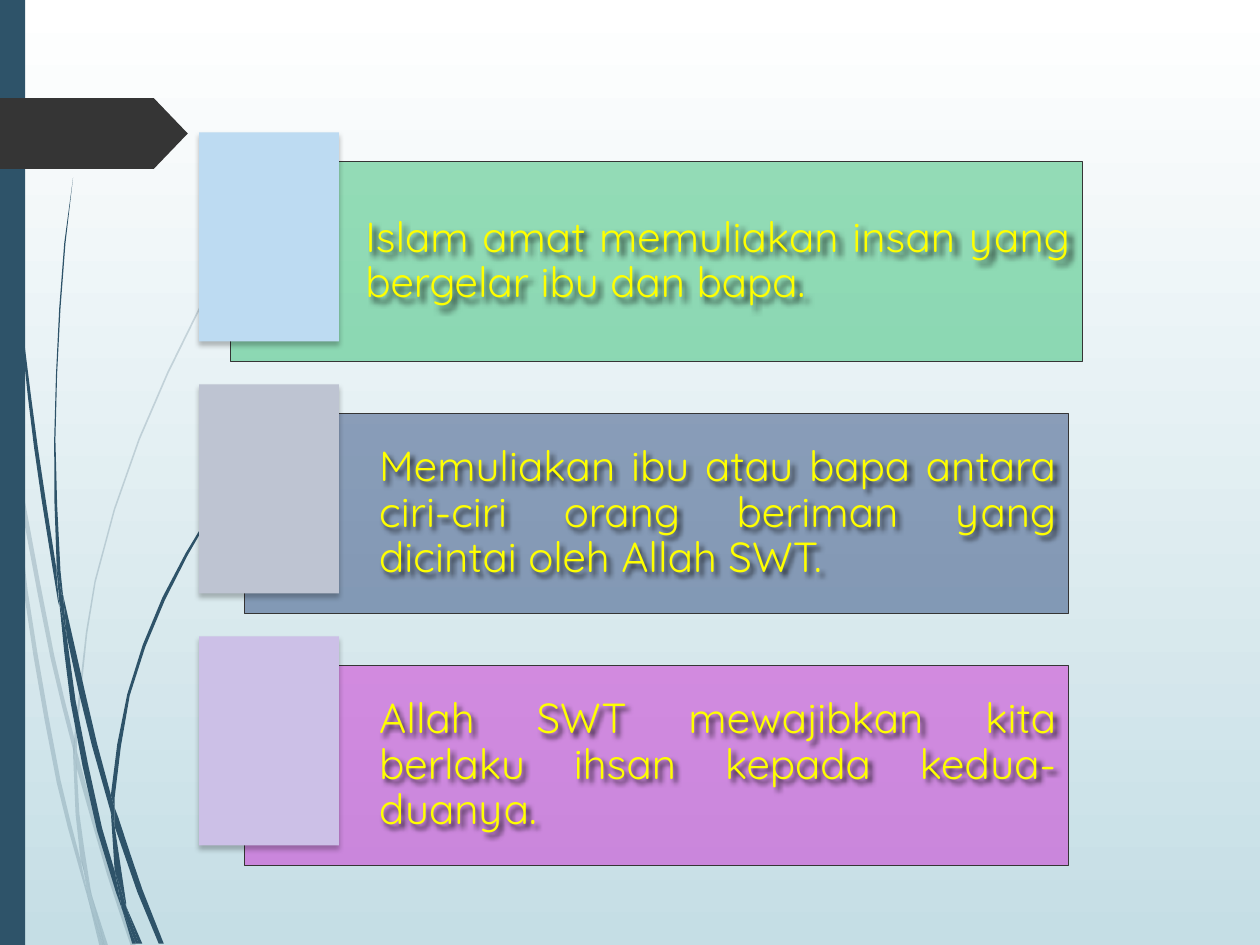
from math import dist

from lxml import etree
from pptx import Presentation
from pptx.dml.color import RGBColor
from pptx.enum.shapes import MSO_SHAPE
from pptx.enum.text import MSO_ANCHOR, PP_ALIGN
from pptx.oxml.ns import qn
from pptx.util import Pt

PX = 9144  # 100 px to the inch
RECTANGLE, PENTAGON = MSO_SHAPE.RECTANGLE, MSO_SHAPE.PENTAGON
JUSTIFY, MIDDLE = PP_ALIGN.JUSTIFY, MSO_ANCHOR.MIDDLE

WHITE = RGBColor(0xFF, 0xFF, 0xFF)
MIST = RGBColor(0xC5, 0xDE, 0xE5)
TEAL = RGBColor(0x2E, 0x53, 0x69)
CHARCOAL = RGBColor(0x35, 0x35, 0x35)
YELLOW = RGBColor(0xFF, 0xFF, 0x00)
GREEN = RGBColor(0x00, 0xB0, 0x50)
NAVY = RGBColor(0x00, 0x20, 0x60)
MAGENTA = RGBColor(0xCC, 0x00, 0xCC)
PALE_BLUE = RGBColor(0xBD, 0xDB, 0xF2)
PALE_GREY = RGBColor(0xBE, 0xC4, 0xD2)
PALE_VIOLET = RGBColor(0xCC, 0xC0, 0xE7)

# Each blade of grass has two edges, drawn one after the other round its outline.
FAINT_BLADES = [
    ([(8, 350), (6, 322), (0, 282)], [(0, 299), (7, 344), (8, 350)]),
    ([(10, 345), (43, 520), (59, 586)], [(59, 599), (40, 522), (12, 376)]),
    ([(61, 596), (64, 607), (88, 692), (108, 751)], [(104, 751), (85, 694), (61, 610)]),
    ([(73, 711), (83, 751)], [(86, 751), (73, 711)]),
    ([(8, 350), (19, 470), (45, 621), (64, 693), (70, 714)],
     [(69, 707), (64, 683), (48, 619), (22, 469), (12, 376), (8, 350)]),
    ([(58, 599), (60, 646), (64, 683), (67, 692), (73, 711)],
     [(72, 706), (63, 646), (61, 610), (61, 608), (58, 599)]),
    ([(61, 596), (61, 584), (76, 462), (111, 349), (159, 245), (187, 198), (201, 175), (217, 154)],
     [(217, 153), (201, 175), (186, 197), (158, 244), (110, 348), (75, 461), (59, 584), (59, 586)]),
    ([(70, 714), (79, 751)], [(82, 751), (70, 714)]),
    ([(61, 608), (61, 610), (61, 596)], [(59, 586), (58, 599)]),
    ([(65, 683), (69, 707), (70, 714), (82, 751)], [(83, 751), (73, 711), (67, 692), (65, 683)]),
]
DARK_BLADES = [
    ([(2, 0), (3, 48), (5, 110), (14, 233), (27, 355), (46, 477), (47, 481)],
     [(45, 457), (45, 453), (30, 355), (15, 232), (6, 109), (4, 48), (3, 0)]),
    ([(50, 472), (53, 505), (73, 592), (88, 645)], [(88, 633), (88, 631), (77, 590), (50, 472)]),
    ([(91, 641), (91, 656), (109, 708), (126, 749)], [(130, 749), (113, 706), (94, 649), (91, 641)]),
    ([(47, 477), (56, 557), (77, 659), (92, 708), (97, 722)],
     [(96, 717), (91, 691), (81, 657), (60, 556), (53, 505), (47, 477)]),
    ([(58, 141), (51, 193), (47, 245), (43, 349), (45, 449), (49, 472)],
     [(50, 472), (48, 453), (44, 349), (48, 245), (52, 193), (58, 141)]),
    ([(100, 719), (110, 749)], [(113, 749), (100, 719)]),
    ([(47, 477), (53, 505), (50, 472)], [(49, 472), (45, 449), (45, 453), (47, 477)]),
    ([(91, 633), (103, 552), (131, 476), (169, 406), (191, 374), (203, 359), (216, 344)],
     [(215, 344), (203, 358), (191, 373), (168, 405), (129, 474), (101, 551), (88, 631), (91, 641)]),
    ([(97, 722), (105, 749)], [(108, 749), (97, 722)]),
    ([(88, 645), (91, 691), (96, 706), (100, 719)], [(100, 716), (91, 656), (90, 651), (88, 645)]),
    ([(88, 645), (90, 651), (91, 656), (91, 641)], [(88, 631), (88, 633), (88, 645)]),
    ([(91, 691), (96, 717), (97, 722), (108, 749)], [(110, 749), (100, 719), (96, 706), (91, 691)]),
]
# Text, panel left, panel width, panel colour, tile colour, letter outline in points
POINTS = [
    ("Islam amat memuliakan insan yang bergelar ibu dan bapa.",
     183, 676, GREEN, PALE_BLUE, 0.75),
    ("Memuliakan ibu atau bapa antara ciri-ciri orang beriman yang dicintai oleh Allah SWT.",
     194, 654, NAVY, PALE_GREY, 0.75),
    ("Allah SWT mewajibkan kita berlaku ihsan kepada kedua-duanya.",
     194, 654, MAGENTA, PALE_VIOLET, 0),
]


def finish(shape, colour=None, opacity=100, shadow=None):
    """Set fill and shadow, no line; shadow is (opacity %, blur pt, distance pt, degrees)."""
    shape.line.fill.background()
    shape.shadow.inherit = False
    if colour is None:
        shape.fill.background()
    else:
        shape.fill.solid()
        shape.fill.fore_color.rgb = colour
    properties = shape.element.spPr
    if opacity < 100:
        tint = properties.find(qn("a:solidFill"))[0]
        etree.SubElement(tint, qn("a:alpha"), val=str(opacity * 1000))
    if shadow:
        strength, blur, distance, angle = shadow
        outer = etree.SubElement(properties.find(qn("a:effectLst")), qn("a:outerShdw"),
                                 blurRad=str(Pt(blur)), dist=str(Pt(distance)),
                                 dir=str(angle * 60000), algn="ctr", rotWithShape="0")
        black = etree.SubElement(outer, qn("a:srgbClr"), val="000000")
        etree.SubElement(black, qn("a:alpha"), val=str(strength * 1000))


def add_text(text, left, top, width, height, *, size, font, colour, outline):
    box = page.shapes.add_textbox(left * PX, top * PX, width * PX, height * PX)
    finish(box, shadow=(80, 3, 3, 45))
    frame = box.text_frame
    frame.word_wrap = True
    frame.vertical_anchor = MIDDLE
    frame.margin_left = 107 * PX
    frame.margin_right = frame.margin_top = frame.margin_bottom = 10 * PX
    para = frame.paragraphs[0]
    para.alignment = JUSTIFY
    para.line_spacing = 0.9
    span = para.add_run()
    span.text = text
    span.font.size = Pt(size)
    span.font.name = font
    span.font.color.rgb = colour
    edge = etree.Element(qn("a:ln"), w=str(Pt(outline)))
    ink = etree.SubElement(edge, qn("a:solidFill"))
    etree.SubElement(ink, qn("a:srgbClr"), val=str(colour))
    span.font._element.insert(0, edge)


deck = Presentation()
deck.slide_width, deck.slide_height = 1000 * PX, 750 * PX
page = deck.slides.add_slide(deck.slide_layouts[6])

backdrop = page.background.fill
backdrop.gradient()
backdrop.gradient_angle = 270
for stop, colour, position in zip(backdrop.gradient_stops, (WHITE, MIST), (0, 1)):
    stop.color.rgb = colour
    stop.position = position

for blades, opacity in ((FAINT_BLADES, 20), (DARK_BLADES, 100)):
    for edges in blades:
        outline = []
        for edge in edges:
            # Smooth the edge: at each point it runs parallel to the chord of its neighbours.
            padded = [edge[0], *edge, edge[-1]]
            for before, start, end, after in zip(padded, padded[1:], padded[2:], padded[3:]):
                length = dist(start, end)
                lead = length / (dist(before, end) or 1)
                trail = length / (dist(start, after) or 1)
                steps = 1 + int(length // 60)
                for step in range(steps):
                    t = step / steps
                    outline.append(tuple(
                        PX * ((1 + 2 * t) * (1 - t) ** 2 * a + t * (1 - t) ** 2 * lead * (b - p)
                              + t * t * (3 - 2 * t) * b + t * t * (t - 1) * trail * (n - a))
                        for p, a, b, n in zip(before, start, end, after)))
            outline.append(tuple(PX * value for value in edge[-1]))
        builder = page.shapes.build_freeform(*outline[0])
        builder.add_line_segments(outline[1:], close=True)
        finish(builder.convert_to_shape(), TEAL, opacity)

sidebar = page.shapes.add_shape(RECTANGLE, 0, 0, 20 * PX, 750 * PX)
finish(sidebar, TEAL)
pointer = page.shapes.add_shape(PENTAGON, 0, 78 * PX, 149 * PX, 56 * PX)
pointer.adjustments[0] = 0.48
finish(pointer, CHARCOAL)

for row, (text, left, width, panel_colour, tile_colour, outline) in enumerate(POINTS):
    top = 128 + 200 * row
    panel = page.shapes.add_shape(RECTANGLE, left * PX, top * PX, width * PX, 159 * PX)
    finish(panel, panel_colour, 40)
    panel.line.color.rgb = CHARCOAL
    panel.line.width = Pt(0.75)
    add_text(text, left, top, width, 159, size=24, font="Quicksand", colour=YELLOW, outline=outline)
    tile = page.shapes.add_shape(RECTANGLE, 158 * PX, (top - 23) * PX, 111 * PX, 166 * PX)
    finish(tile, tile_colour, shadow=(25, 3, 2, 90))

deck.save("out.pptx")
